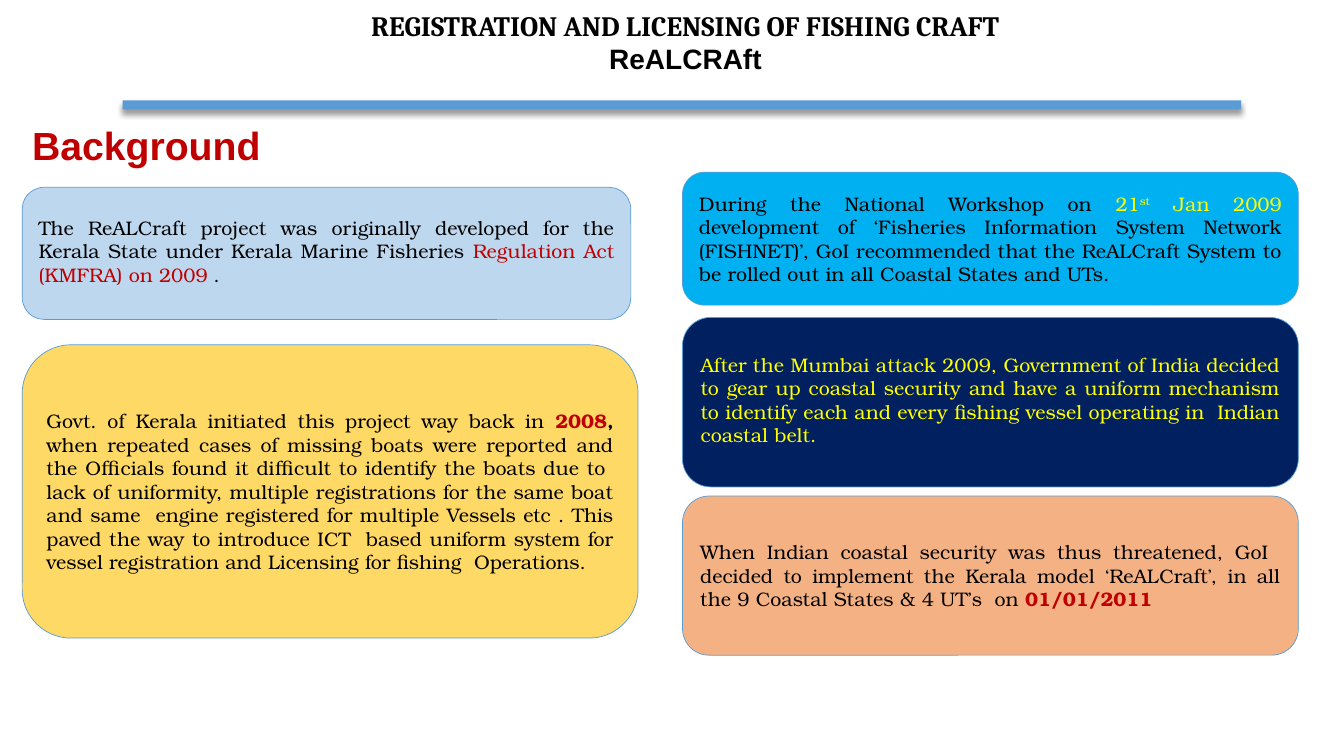
from dataclasses import dataclass

from lxml import etree
from pptx import Presentation
from pptx.dml.color import RGBColor
from pptx.enum.shapes import MSO_SHAPE
from pptx.enum.text import MSO_ANCHOR, PP_ALIGN
from pptx.oxml.ns import qn
from pptx.util import Cm, Pt

RECTANGLE = MSO_SHAPE.RECTANGLE
ROUNDED = MSO_SHAPE.ROUNDED_RECTANGLE
MIDDLE = MSO_ANCHOR.MIDDLE
CENTER = PP_ALIGN.CENTER
JUSTIFY = PP_ALIGN.JUSTIFY


@dataclass(frozen=True)
class Theme:
    """Colours, fonts and type sizes of the slide."""
    black: str = "000000"
    red: str = "C00000"
    yellow: str = "FFFF00"
    accent: str = "5B9BD5"
    pale_blue: str = "BDD7EE"
    gold: str = "FFD966"
    sky: str = "00B0F0"
    navy: str = "002060"
    peach: str = "F4B183"
    title_font: str = "Cambria"
    heading_font: str = "Arial"
    body_font: str = "TeX Gyre Bonum"
    dot_font: str = "Calibri"
    title_size: int = 20
    heading_size: int = 28
    body_size: int = 14
    outline: float = 0.5


class SlideBuilder:
    """Draws each kind of element on one slide in one theme."""

    def __init__(self, slide, theme):
        self.slide = slide
        self.theme = theme

    def set_font(self, font, name, size, color, bold=False):
        """Apply a full set of type properties."""
        font.name, font.size, font.bold = name, Pt(size), bold
        font.color.rgb = RGBColor.from_string(color)

    def shape(self, kind, place, fill):
        """Add a filled shape without shadow."""
        shape = self.slide.shapes.add_shape(kind, *map(Cm, place))
        shape.shadow.inherit = False
        shape.fill.solid()
        shape.fill.fore_color.rgb = RGBColor.from_string(fill)
        return shape

    def rule(self, place):
        """Add the header bar with its soft shadow."""
        bar = self.shape(RECTANGLE, place, self.theme.accent)
        bar.line.fill.background()
        effects = bar._element.spPr.find(qn("a:effectLst"))
        shadow = etree.SubElement(effects, qn("a:outerShdw"), blurRad=str(Pt(4)),
                                  dist=str(Pt(3)), dir="5400000", rotWithShape="0")
        color = etree.SubElement(shadow, qn("a:srgbClr"), val=self.theme.black)
        etree.SubElement(color, qn("a:alpha"), val="40000")

    def label(self, place, lines, size, color, align, wrap=True):
        """Add a bold text box from (text, font name) lines."""
        frame = self.slide.shapes.add_textbox(*map(Cm, place)).text_frame
        frame.word_wrap = wrap
        for index, (text, font_name) in enumerate(lines):
            paragraph = frame.add_paragraph() if index else frame.paragraphs[0]
            paragraph.text = text
            paragraph.alignment = align
            self.set_font(paragraph.font, font_name, size, color, True)

    def card(self, place, fill, color, pieces, bottom=0.13):
        """Add a rounded card from (text, run overrides) pieces."""
        card = self.shape(ROUNDED, place, fill)
        card.line.color.rgb = RGBColor.from_string(self.theme.accent)
        card.line.width = Pt(self.theme.outline)
        frame = card.text_frame
        frame.word_wrap = True
        frame.vertical_anchor = MIDDLE
        frame.margin_bottom = Cm(bottom)
        paragraph = frame.paragraphs[0]
        paragraph.alignment = JUSTIFY
        self.set_font(paragraph.font, self.theme.body_font, self.theme.body_size, color)
        for text, style in pieces:
            run = paragraph.add_run()
            run.text = text
            if "color" in style:
                run.font.color.rgb = RGBColor.from_string(style["color"])
            if "bold" in style:
                run.font.bold = style["bold"]
            if "font" in style:
                run.font.name = style["font"]
            if "baseline" in style:
                run._r.get_or_add_rPr().set("baseline", style["baseline"])


def main():
    """Build the background slide and save it."""
    deck = Presentation()
    deck.slide_width, deck.slide_height = Cm(33.87), Cm(19.05)
    theme = Theme()
    page = SlideBuilder(deck.slides.add_slide(deck.slide_layouts[6]), theme)
    left, right, width = 0.56, 17.2, 15.52
    red, yellow = {"color": theme.red}, {"color": theme.yellow}
    strong_red = {"color": theme.red, "bold": True}

    page.rule((3.09, 2.53, 28.19, 0.23))
    page.label((6.99, 0.08, 20.57, 1.96),
               [("REGISTRATION AND LICENSING OF FISHING CRAFT", theme.title_font),
                ("ReALCRAft", theme.heading_font)],
               theme.title_size, theme.black, CENTER, wrap=False)
    page.label((left, 2.92, 6.78, 1.45), [("Background", theme.heading_font)],
               theme.heading_size, theme.red, JUSTIFY)

    page.card((left, 4.72, 15.34, 3.33), theme.pale_blue, theme.black, [
        ("The ReALCraft project was originally developed for the Kerala State under "
         "Kerala Marine Fisheries ", {}),
        ("Regulation Act (KMFRA) on 2009 ", red),
        (".", {"font": theme.dot_font})], bottom=0.25)
    page.card((left, 8.69, width, 7.39), theme.gold, theme.black, [
        ("Govt. of Kerala initiated this project way back in ", {}),
        ("2008", strong_red),
        (",", {"bold": True}),
        (" when repeated cases of missing boats were reported and the Officials found it "
         "difficult to identify the boats due to  lack of uniformity, multiple "
         "registrations for the same boat and same  engine registered for multiple "
         "Vessels etc . This paved the way to introduce ICT  based uniform system for "
         "vessel registration and Licensing for fishing  Operations.", {})])
    page.card((right, 4.34, width, 3.35), theme.sky, theme.black, [
        ("During the National Workshop on ", {}),
        ("21", yellow),
        ("st", {"color": theme.yellow, "baseline": "30000"}),
        (" Jan 2009 ", yellow),
        ("development of ‘Fisheries Information System Network (FISHNET)’, GoI "
         "recommended that the ReALCraft System to be rolled out in all Coastal States "
         "and UTs.", {})])
    page.card((right, 8.0, width, 4.27), theme.navy, theme.yellow, [
        ("After the Mumbai attack 2009, Government of India decided to gear up coastal "
         "security and have a uniform mechanism to identify each and every fishing "
         "vessel operating in  Indian coastal belt.", {})], bottom=0.25)
    page.card((right, 12.5, width, 4.01), theme.peach, theme.black, [
        ("When Indian coastal security was thus threatened, GoI  decided to implement "
         "the Kerala model ‘ReALCraft’, in all the 9 Coastal States & 4 UT’s  on ", {}),
        ("01/01/2011", strong_red)])
    deck.save("out.pptx")


if __name__ == "__main__":
    main()
